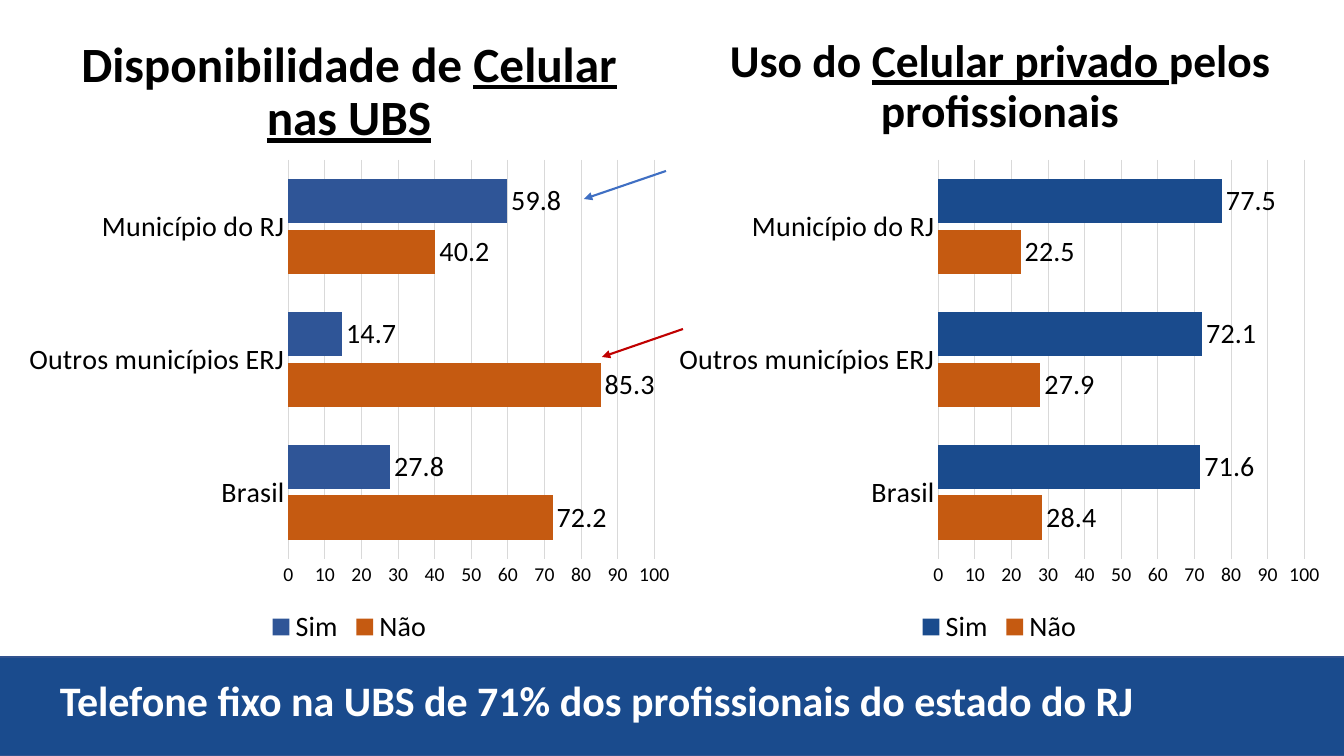
from lxml.etree import SubElement
from pptx import Presentation
from pptx.chart.data import CategoryChartData
from pptx.dml.color import RGBColor
from pptx.enum.chart import XL_CHART_TYPE, XL_LABEL_POSITION, XL_LEGEND_POSITION, XL_TICK_MARK
from pptx.enum.shapes import MSO_CONNECTOR, MSO_SHAPE
from pptx.enum.text import MSO_ANCHOR, MSO_AUTO_SIZE, PP_ALIGN
from pptx.oxml.ns import qn
from pptx.util import Emu, Pt

BLACK = RGBColor(0x00, 0x00, 0x00)
WHITE = RGBColor(0xFF, 0xFF, 0xFF)
NAVY = RGBColor(0x1A, 0x4B, 0x8D)
EDGE = RGBColor(0x31, 0x53, 0x8F)
BLUE = RGBColor(0x2F, 0x55, 0x97)
ORANGE = RGBColor(0xC5, 0x5A, 0x11)
GRID = RGBColor(0xD9, 0xD9, 0xD9)
SKY = RGBColor(0x3F, 0x6F, 0xC3)
RED = RGBColor(0xC0, 0x00, 0x00)

FACE = "Calibri"
SCALE = 12192000 / 1344  # EMU in one px
PLACES = ["Brasil", "Outros municípios ERJ", "Município do RJ"]


def px(*sizes):
    return [Emu(round(size * SCALE)) for size in sizes]


class Deck:
    def __init__(self):
        self.show = Presentation()
        self.show.slide_width, self.show.slide_height = px(1344, 756)
        self.slide = self.show.slides.add_slide(self.show.slide_layouts[4])
        self.shapes = self.slide.shapes

    def style(self, font, size, color=BLACK, bold=None):
        font.name, font.size, font.bold = FACE, Pt(size), bold
        font.color.rgb = color

    def add_runs(self, para, runs, size, color):
        for text, under in runs:
            run = para.add_run()
            run.text = text
            self.style(run.font, size, color, True)
            run.font.underline = under

    def head(self, index, box, runs, size):
        shape = self.slide.placeholders[index]
        shape.left, shape.top, shape.width, shape.height = px(*box)
        frame = shape.text_frame
        frame.auto_size = MSO_AUTO_SIZE.NONE
        frame.vertical_anchor = MSO_ANCHOR.BOTTOM
        para = frame.paragraphs[0]
        para.alignment = PP_ALIGN.CENTER
        para.line_spacing = 0.9
        para.space_before = Pt(0)
        self.add_runs(para, runs, size, BLACK)

    def band(self, box):
        shape = self.shapes.add_shape(MSO_SHAPE.RECTANGLE, *px(*box))
        shape.shadow.inherit = False
        shape.fill.solid()
        shape.fill.fore_color.rgb = NAVY
        shape.line.color.rgb = EDGE
        shape.line.width = Pt(1)

    def text(self, box, text, size, color):
        frame = self.shapes.add_textbox(*px(*box)).text_frame
        frame.word_wrap = True
        frame.auto_size = MSO_AUTO_SIZE.SHAPE_TO_FIT_TEXT
        para = frame.paragraphs[0]
        para.line_spacing = 1.07
        para.space_after = Pt(8)
        self.add_runs(para, [(text, None)], size, color)

    def axis(self, axis, size):
        axis.major_tick_mark = axis.minor_tick_mark = XL_TICK_MARK.NONE
        self.style(axis.tick_labels.font, size)

    def chart(self, box, series, size):
        data = CategoryChartData(number_format="0.0")
        data.categories = PLACES
        for name, values, color in series:
            data.add_series(name, values)
        chart = self.shapes.add_chart(
            XL_CHART_TYPE.BAR_CLUSTERED, *px(*box), data).chart
        self.style(chart.font, size)
        chart.has_title = False

        # Axes and grid
        cat, val = chart.category_axis, chart.value_axis
        self.axis(cat, 20)
        self.axis(val, 14)
        val.minimum_scale, val.maximum_scale, val.major_unit = 0, 100, 10
        val.tick_labels.number_format = "0"
        val.tick_labels.number_format_is_linked = False
        val.format.line.fill.background()
        for line in (cat.format.line, val.major_gridlines.format.line):
            line.color.rgb = GRID
            line.width = Pt(0.75)

        # Legend
        chart.has_legend = True
        chart.legend.position = XL_LEGEND_POSITION.BOTTOM
        chart.legend.include_in_layout = False
        self.style(chart.legend.font, 20)

        # Bars and values
        plot = chart.plots[0]
        plot.vary_by_categories = False
        plot.gap_width, plot.overlap = 85, -15
        for bars, (name, values, color) in zip(plot.series, series):
            bars.invert_if_negative = False
            bars.format.fill.solid()
            bars.format.fill.fore_color.rgb = color
            labels = bars.data_labels
            labels.show_value = True
            labels.position = XL_LABEL_POSITION.OUTSIDE_END
            self.style(labels.font, 20)

    def arrow(self, ends, color):
        link = self.shapes.add_connector(MSO_CONNECTOR.STRAIGHT, *px(*ends))
        link.line.color.rgb = color
        link.line.width = Pt(1.5)
        props = link._element.spPr
        SubElement(props.find(qn("a:ln")), qn("a:tailEnd"), type="triangle")
        SubElement(props, qn("a:effectLst"))

    def save(self):
        for shape in list(self.slide.placeholders):
            if not shape.text_frame.text:
                shape._element.getparent().remove(shape._element)
        self.show.save("out.pptx")


def main():
    deck = Deck()

    # Headings
    deck.head(1, (56, 18, 586, 133),
              [("Disponibilidade de ", None), ("Celular nas UBS", True)], 35.2)
    deck.head(3, (714, 30, 572, 112),
              [("Uso do ", None), ("Celular privado ", True),
               ("pelos profissionais", False)], 32.5)

    # Bottom band
    deck.band((-18, 657, 1365, 99))
    deck.text((50, 666, 1205, 62),
              "Telefone fixo na UBS de 71% dos profissionais do estado do RJ",
              30, WHITE)

    # Charts
    deck.chart((16, 150, 667, 500),
               [("Não", (72.2, 85.3, 40.2), ORANGE),
                ("Sim", (27.8, 14.7, 59.8), BLUE)], 10)
    deck.chart((666, 150, 667, 500),
               [("Não", (28.4, 27.9, 22.5), ORANGE),
                ("Sim", (71.6, 72.1, 77.5), NAVY)], 18)

    # Arrows
    deck.arrow((666, 171, 584, 199), SKY)
    deck.arrow((683, 329, 602, 357), RED)

    deck.save()


if __name__ == "__main__":
    main()
